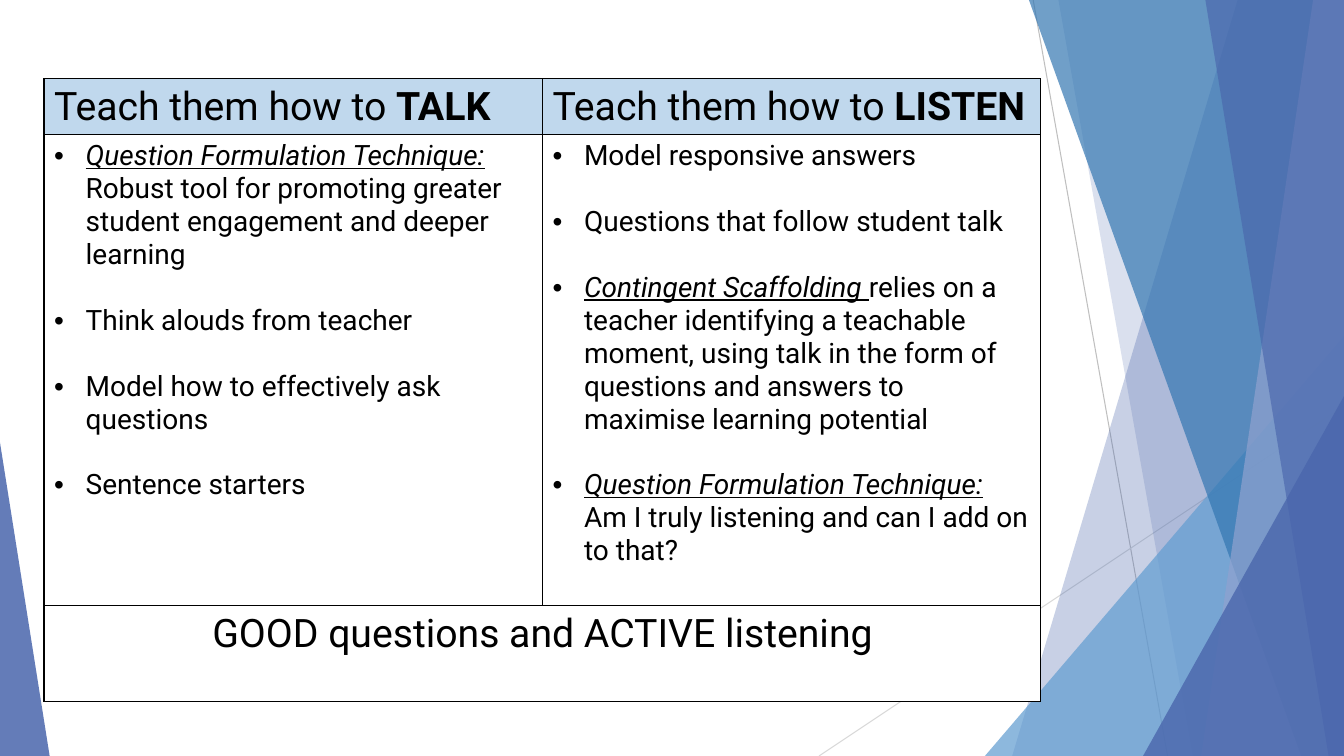
import pptx
import pptx.dml.color
import pptx.enum.shapes
import pptx.enum.text
import pptx.oxml
import pptx.oxml.ns
import pptx.util
import lxml.etree

Pt = pptx.util.Pt
RGBColor = pptx.dml.color.RGBColor
qn = pptx.oxml.ns.qn

BLACK = RGBColor(0x00, 0x00, 0x00)
WHITE = RGBColor(0xFF, 0xFF, 0xFF)
PALE = RGBColor(0xC0, 0xD8, 0xED)
NAVY = RGBColor(0x4A, 0x66, 0xAC)
SKY = RGBColor(0x62, 0x9D, 0xD1)
TEAL = RGBColor(0x34, 0x77, 0xB2)
LILAC = RGBColor(0x90, 0xA2, 0xCF)
GREY = RGBColor(0xBF, 0xBF, 0xBF)
SILVER = RGBColor(0xD9, 0xD9, 0xD9)

WIDE, HIGH = 960, 540

# A run is (text, style): "b" bold, "i" italic and underlined, "" plain.
HEADS = [
    [("Teach them how to ", ""), ("TALK", "b")],
    [("Teach them how to ", ""), ("LISTEN", "b")],
]
TALK = [
    [("Question Formulation Technique:", "i"), (" ", ""), ("\v", ""),
     ("Robust tool for promoting greater student engagement and deeper learning", "")],
    [("Think alouds from teacher", "")],
    [("Model how to effectively ask questions", "")],
    [("Sentence starters", "")],
]
LISTEN = [
    [("Model responsive answers", "")],
    [("Questions that follow student talk", "")],
    [("Contingent Scaffolding ", "i"),
     ("relies on a teacher identifying a teachable moment, using talk in the form of "
      "questions and answers to maximise learning potential", "")],
    [("Question Formulation Technique:", "i"), ("\v", ""),
     ("Am I truly listening and can I add on to that?", "")],
]
CLOSE = [("GOOD questions and ACTIVE listening", "")]


class Deck:
    font = "Roboto"
    large, small = 28, 20
    gap = 23.4
    hang = 22.5

    def __init__(self):
        self.file = pptx.Presentation()
        self.file.slide_width, self.file.slide_height = Pt(WIDE), Pt(HIGH)
        self.slide = self.file.slides.add_slide(self.file.slide_layouts[6])
        self.shapes = self.slide.shapes

    def line(self, start, end, color):
        line = self.shapes.add_connector(
            pptx.enum.shapes.MSO_CONNECTOR.STRAIGHT, *map(Pt, start + end))
        line.line.color.rgb = color
        line.line.width = Pt(0.75)
        lxml.etree.SubElement(line._element.spPr, qn("a:effectLst"))

    def paint(self, shape, color, alpha):
        shape.shadow.inherit = False
        shape.line.fill.background()
        shape.fill.solid()
        shape.fill.fore_color.rgb = color
        tint = shape._element.spPr.find(".//" + qn("a:srgbClr"))
        lxml.etree.SubElement(tint, qn("a:alpha"), val=str(alpha * 1000))

    def band(self, top, foot, color, alpha):
        """Fill the full-height area from a slanted edge to the right side."""
        pen = self.shapes.build_freeform(Pt(top), 0)
        pen.add_line_segments(
            [(Pt(x), Pt(y)) for x, y in ((WIDE, 0), (WIDE, HIGH), (foot, HIGH))])
        self.paint(pen.convert_to_shape(), color, alpha)

    def wedge(self, left, top, width, tip, color, alpha):
        """Draw a right triangle that stands on the bottom edge."""
        shape = self.shapes.add_shape(
            pptx.enum.shapes.MSO_SHAPE.ISOSCELES_TRIANGLE,
            Pt(left), Pt(top), Pt(width), Pt(HIGH - top))
        shape.adjustments[0] = tip
        self.paint(shape, color, alpha)

    def table(self, left, top, cols, rows):
        grid = self.shapes.add_table(
            len(rows), len(cols), Pt(left), Pt(top), Pt(sum(cols)), Pt(sum(rows))).table
        grid.first_row = grid.horz_banding = False
        for col, width in zip(grid.columns, cols):
            col.width = Pt(width)
        for row, height in zip(grid.rows, rows):
            row.height = Pt(height)
        for cell in grid.iter_cells():
            self.frame(cell)
        return grid

    def frame(self, cell):
        """Give a cell its four borders and a white fill."""
        props = cell._tc.get_or_add_tcPr()
        for side in ("lnL", "lnR", "lnT", "lnB"):
            edge = lxml.etree.SubElement(props, qn("a:" + side), w=str(Pt(1)))
            fill = lxml.etree.SubElement(edge, qn("a:solidFill"))
            lxml.etree.SubElement(fill, qn("a:srgbClr"), val=str(BLACK))
        cell.fill.solid()
        cell.fill.fore_color.rgb = WHITE

    def label(self, para, parts, size):
        for text, style in parts:
            if text == "\v":
                para.add_line_break()
                continue
            run = para.add_run()
            run.text = text
            font = run.font
            font.name, font.size = self.font, Pt(size)
            font.color.rgb = BLACK
            font.bold = style == "b"
            font.italic = font.underline = style == "i"

    def title(self, cell, parts, color=WHITE, align=pptx.enum.text.PP_ALIGN.LEFT):
        cell.fill.fore_color.rgb = color
        para = cell.text_frame.paragraphs[0]
        para.alignment = align
        self.label(para, parts, self.large)

    def items(self, cell, items):
        """Fill a cell with a bulleted list."""
        frame = cell.text_frame
        for n, parts in enumerate(items):
            para = frame.add_paragraph() if n else frame.paragraphs[0]
            if n:
                para.space_before = Pt(self.gap)
            props = para._p.get_or_add_pPr()
            props.set("marL", str(Pt(self.hang)))
            props.set("indent", str(-Pt(self.hang)))
            lxml.etree.SubElement(props, qn("a:buFont"), typeface="Arial")
            lxml.etree.SubElement(props, qn("a:buChar"), char="•")
            self.label(para, parts, self.small)


def main():
    deck = Deck()
    deck.line((738, 0), (834, HIGH), GREY)
    deck.line((WIDE, 290), (585, HIGH), SILVER)
    deck.band(884, 723, NAVY, 30)
    deck.band(756, 852, NAVY, 20)
    deck.wedge(703.5, 240, 256.5, 1, SKY, 72)
    deck.band(735, 929.5, TEAL, 70)
    deck.band(938, 858, LILAC, 70)
    deck.band(861, 949, NAVY, 65)
    deck.wedge(816.5, 283, 143.5, 1, NAVY, 80)
    deck.wedge(0, 316, 35.5, 0, NAVY, 85)

    grid = deck.table(31.5, 56.3, [356, 356], [40, 336.5, 68.5])
    for col, parts in enumerate(HEADS):
        deck.title(grid.cell(0, col), parts, PALE)
    for col, items in enumerate((TALK, LISTEN)):
        deck.items(grid.cell(1, col), items)
    grid.cell(2, 0).merge(grid.cell(2, 1))
    deck.title(grid.cell(2, 0), CLOSE, align=pptx.enum.text.PP_ALIGN.CENTER)
    deck.file.save("out.pptx")


if __name__ == "__main__":
    main()
